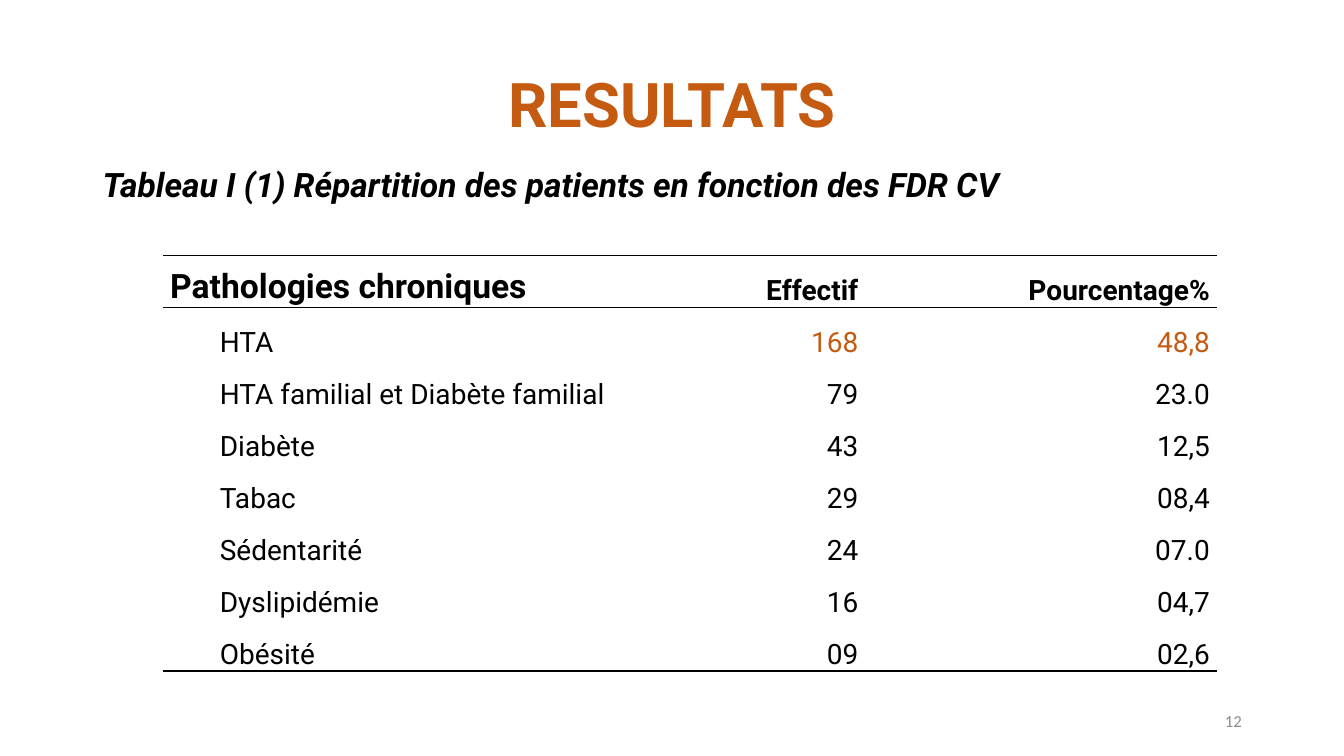
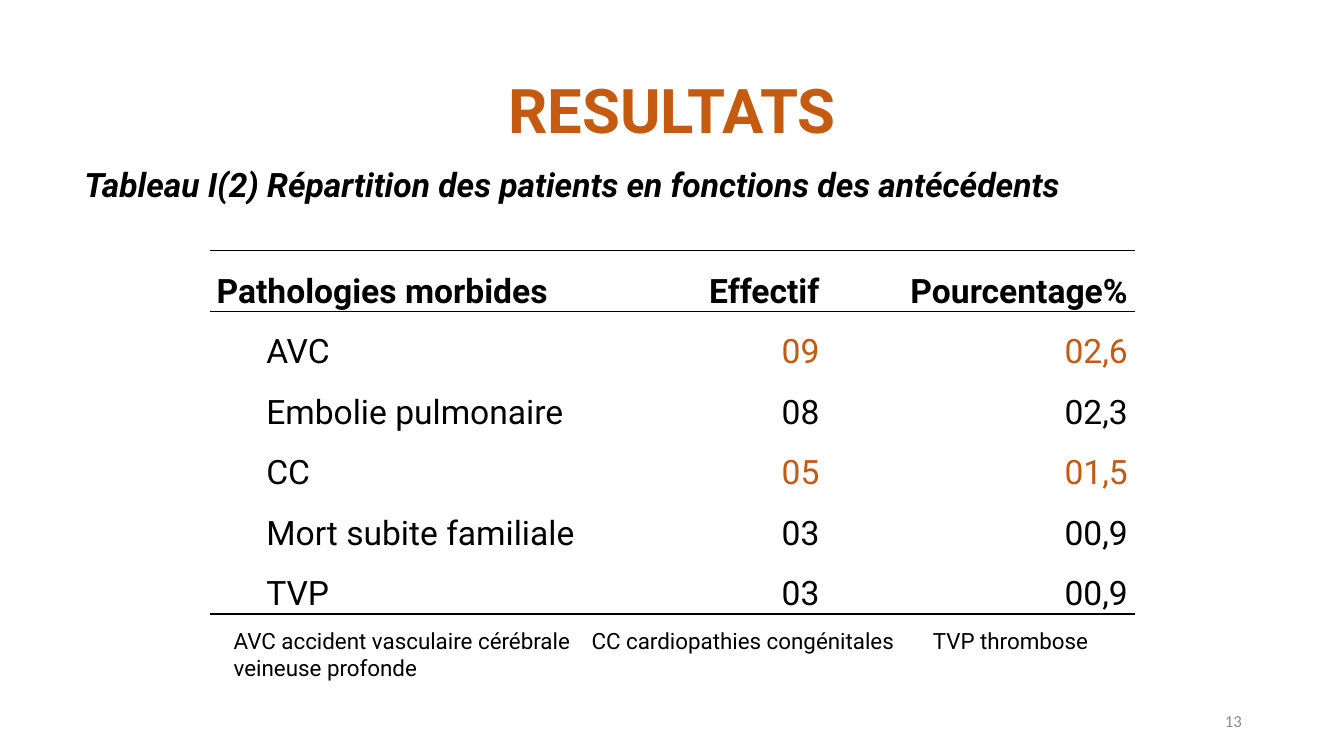
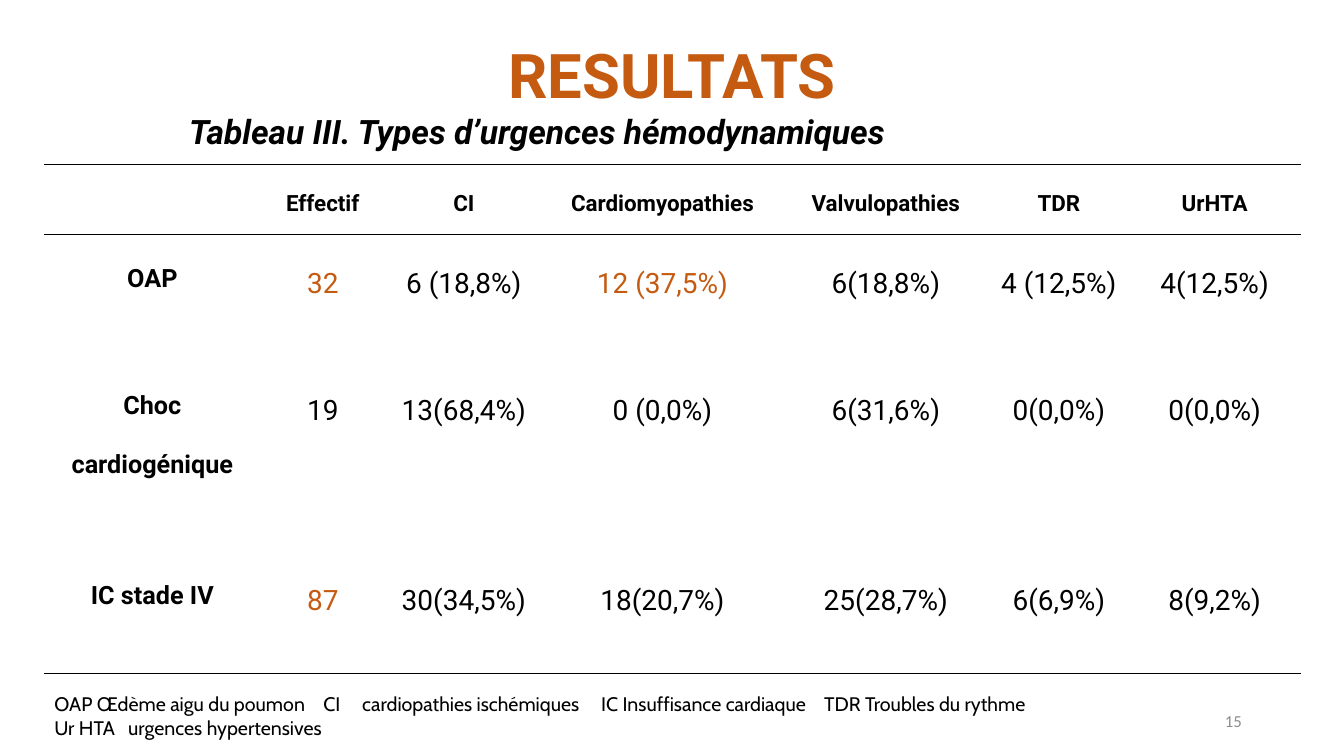
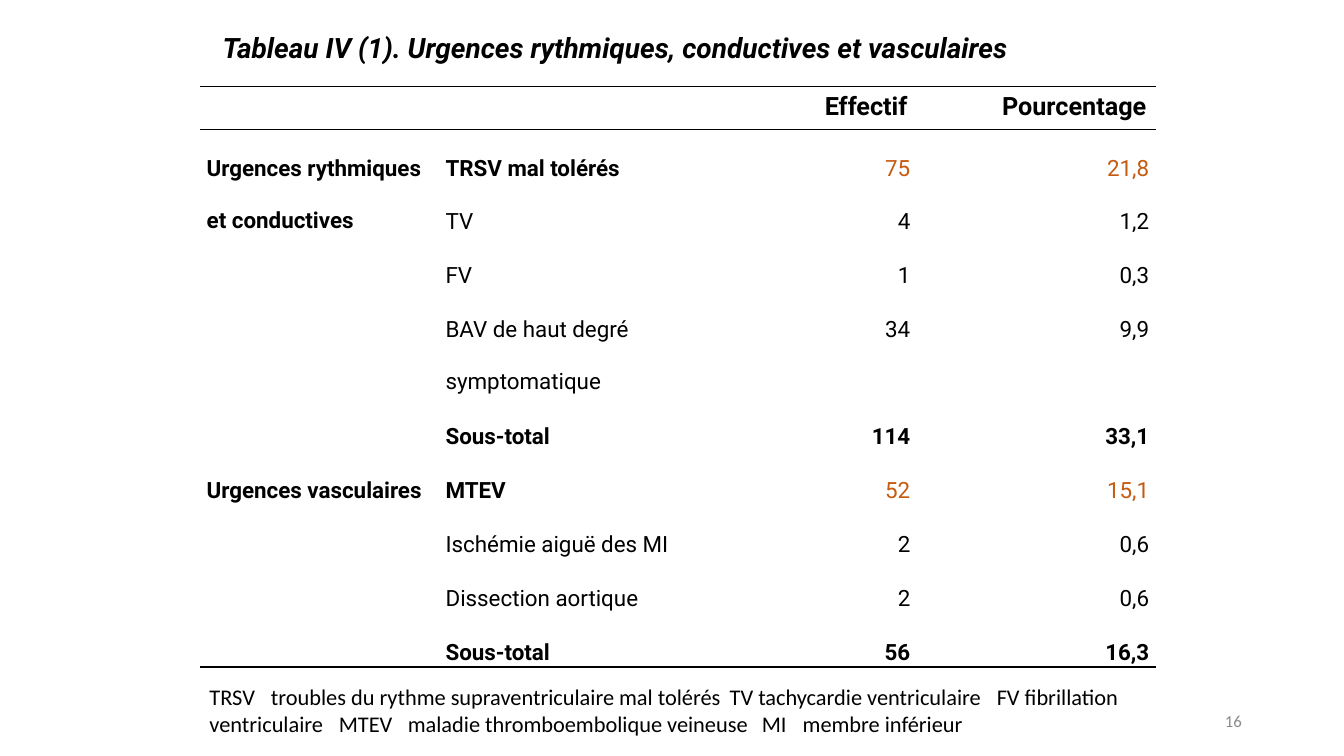
from collections import namedtuple

from lxml import etree
from pptx import Presentation
from pptx.dml.color import RGBColor
from pptx.enum.text import MSO_ANCHOR, PP_ALIGN
from pptx.oxml.ns import qn
from pptx.util import Cm, Pt

LEFT, CENTER, RIGHT = PP_ALIGN.LEFT, PP_ALIGN.CENTER, PP_ALIGN.RIGHT
TOP, MIDDLE, BOTTOM = MSO_ANCHOR.TOP, MSO_ANCHOR.MIDDLE, MSO_ANCHOR.BOTTOM

COLORS = {"text": "000000", "accent": "C55A11", "page": "8C8C8C"}
FONT = "Roboto"
NO_STYLE = "{2D5ABB26-0587-4C30-8999-92F81FD0307C}"
TIGHT = (0.18, 0)  # horizontal and vertical cell margins

Column = namedtuple("Column", "width align head_size size head_spacing indent",
                    defaults=(1.5, 0))


class Deck:
    """Holds the shared style and the slide being built."""

    def __init__(self):
        self.prs = Presentation()
        self.prs.slide_width, self.prs.slide_height = Cm(33.87), Cm(19.05)
        self.slide = None

    def new_slide(self, number):
        self.slide = self.prs.slides.add_slide(self.prs.slide_layouts[6])
        self.text(str(number), (23.93, 17.65, 7.62, 1.02), 12, color="page",
                  font="Calibri", align=RIGHT, anchor=MIDDLE)

    def format(self, paragraph, size, color="text", font=FONT, bold=False,
               italic=False, align=LEFT, spacing=1.0):
        paragraph.alignment = align
        paragraph.line_spacing = spacing
        for run in paragraph.runs:
            run.font.name, run.font.size = font, Pt(size)
            run.font.bold, run.font.italic = bold, italic
            run.font.color.rgb = RGBColor.from_string(COLORS[color])

    def text(self, content, box, size, anchor=TOP, **style):
        frame = self.slide.shapes.add_textbox(*map(Cm, box)).text_frame
        frame.word_wrap = True
        frame.vertical_anchor = anchor
        frame.text = content
        for paragraph in frame.paragraphs:
            self.format(paragraph, size, **style)
        return frame

    def title(self, top):
        self.text("RESULTATS", (2.34, top, 29.21, 3.68), 44, color="accent",
                  bold=True, align=CENTER, anchor=MIDDLE, spacing=0.9)

    def caption(self, content, box, size=24, spacing=1.0):
        self.text(content, box, size, bold=True, italic=True, spacing=spacing)

    def legend(self, content, box, size, font, stops):
        """Abbreviations set apart by tab stops."""
        for paragraph in self.text(content, box, size, font=font).paragraphs:
            props = paragraph._p.get_or_add_pPr()
            tabs = etree.SubElement(props, qn("a:tabLst"))
            for stop in stops:
                etree.SubElement(tabs, qn("a:tab"), pos=str(Cm(stop)), algn="l")

    def rule(self, cell, *sides):
        """Black 1 pt borders; sides are given in schema order."""
        props = cell._tc.get_or_add_tcPr()
        for index, side in enumerate(sides):
            line = etree.Element(qn("a:" + side), w=str(Pt(1)))
            fill = etree.SubElement(line, qn("a:solidFill"))
            etree.SubElement(fill, qn("a:srgbClr"), val=COLORS["text"])
            props.insert(index, line)

    def table(self, corner, columns, heights, rows, accents=(), bold=(),
              merges=(), spacing=1.5, anchor=TOP, head_margins=TIGHT):
        left, top = corner
        width = sum(column.width for column in columns)
        table = self.slide.shapes.add_table(
            len(rows), len(columns), Cm(left), Cm(top), Cm(width),
            Cm(sum(heights))).table
        table.first_row = table.horz_banding = False
        table._tbl.tblPr.find(qn("a:tableStyleId")).text = NO_STYLE
        for index, column in enumerate(columns):
            table.columns[index].width = Cm(column.width)
        for first, last in merges:
            table.cell(first, 0).merge(table.cell(last, 0))
        closing = {(len(rows) - 1, c) for c in range(len(columns))}
        closing |= {(first, 0) for first, last in merges if last == len(rows) - 1}

        for r, row in enumerate(rows):
            table.rows[r].height = Cm(heights[r])
            head = r == 0
            for c, (content, column) in enumerate(zip(row, columns)):
                cell = table.cell(r, c)
                across, down = head_margins if head else TIGHT
                cell.margin_left = cell.margin_right = Cm(across)
                cell.margin_top = cell.margin_bottom = Cm(down)
                cell.vertical_anchor = anchor
                cell.fill.background()
                if content:
                    cell.text_frame.text = content
                    paragraph = cell.text_frame.paragraphs[0]
                    self.format(
                        paragraph, column.head_size if head else column.size,
                        color="accent" if (r, c) in accents else "text",
                        bold=head or (r, c) in bold, align=column.align,
                        spacing=column.head_spacing if head else spacing)
                    if column.indent and not head:
                        paragraph._p.get_or_add_pPr().set(
                            "marL", str(Cm(column.indent)))
                if head:
                    self.rule(cell, "lnT", "lnB")
                elif (r, c) in closing:
                    self.rule(cell, "lnB")


def main():
    deck = Deck()

    # Risk factors
    deck.new_slide(12)
    deck.title(0.86)
    deck.caption("Tableau I (1) Répartition des patients en fonction des FDR CV",
                 (2.34, 4.11, 30.12, 12.09), spacing=0.9)
    risk_factors = [
        ("Pathologies chroniques", "Effectif", "Pourcentage%"),
        ("HTA", "168", "48,8"),
        ("HTA familial et Diabète familial", "79", "23.0"),
        ("Diabète", "43", "12,5"),
        ("Tabac", "29", "08,4"),
        ("Sédentarité", "24", "07.0"),
        ("Dyslipidémie", "16", "04,7"),
        ("Obésité", "09", "02,6"),
    ]
    deck.table((4.11, 6.43),
               [Column(12.67, LEFT, 24, 20, 1.02, 1.25),
                Column(5.03, RIGHT, 20, 20), Column(8.86, RIGHT, 20, 20)],
               [1.31] * len(risk_factors), risk_factors,
               accents={(1, 1), (1, 2)}, anchor=BOTTOM)

    # Medical history
    deck.new_slide(13)
    deck.title(1.02)
    deck.caption("Tableau I(2) Répartition des patients en fonctions des antécédents",
                 (1.88, 4.11, 30.58, 12.09), spacing=0.9)
    history = [
        ("Pathologies morbides", "Effectif", "Pourcentage%"),
        ("AVC", "09", "02,6"),
        ("Embolie pulmonaire", "08", "02,3"),
        ("CC", "05", "01,5"),
        ("Mort subite familiale", "03", "00,9"),
        ("TVP", "03", "00,9"),
    ]
    deck.table((5.28, 6.32),
               [Column(11.13, LEFT, 24, 24, 1.02, 1.25),
                Column(4.42, RIGHT, 24, 24), Column(7.77, RIGHT, 24, 24)],
               [1.49] * len(history), history,
               accents={(1, 1), (1, 2), (3, 1), (3, 2)}, anchor=BOTTOM)
    deck.legend("AVC accident vasculaire cérébrale\tCC cardiopathies congénitales"
                "\tTVP thrombose veineuse profonde",
                (5.64, 15.67, 22.94, 1.63), 16, FONT, [9.02, 17.62])

    # Haemodynamic emergencies
    deck.new_slide(15)
    deck.title(0.13)
    deck.caption("Tableau III. Types d’urgences hémodynamiques",
                 (4.52, 2.67, 25.81, 1.27))
    haemodynamic = [
        ("", "Effectif", "CI", "Cardiomyopathies", "Valvulopathies", "TDR", "UrHTA"),
        ("OAP", "32", "6 (18,8%)", "12 (37,5%)", "6(18,8%)", "4 (12,5%)", "4(12,5%)"),
        ("Choc cardiogénique", "19", "13(68,4%)", "0 (0,0%)", "6(31,6%)",
         "0(0,0%)", "0(0,0%)"),
        ("IC stade IV", "87", "30(34,5%)", "18(20,7%)", "25(28,7%)",
         "6(6,9%)", "8(9,2%)"),
    ]
    value_widths = [3.15, 3.96, 6.05, 5.21, 3.51, 4.34]
    deck.table((1.12, 4.14),
               [Column(5.44, CENTER, 16, 18, 2)]
               + [Column(width, CENTER, 16, 20, 2) for width in value_widths],
               [1.76, 3.2, 4.8, 3.07], haemodynamic,
               accents={(1, 1), (1, 3), (3, 1)},
               bold={(1, 0), (2, 0), (3, 0)}, spacing=2)
    deck.legend("OAP Œdème aigu du poumon\tCI\tcardiopathies ischémiques"
                "\tIC Insuffisance cardiaque\tTDR Troubles du rythme\n"
                "Ur HTA\turgences hypertensives",
                (1.12, 17.32, 29.51, 1.45), 14, "Cabin",
                [1.86, 6.78, 7.76, 13.78, 19.4])

    # Rhythm, conduction and vascular emergencies
    deck.new_slide(16)
    deck.caption("Tableau IV (1). Urgences rythmiques, conductives et vasculaires",
                 (5.36, 0.64, 23.5, 1.12), size=20)
    rhythm_vascular = [
        ("", "", "Effectif", "Pourcentage"),
        ("Urgences rythmiques et conductives", "TRSV mal tolérés", "75", "21,8"),
        ("", "TV", "4", "1,2"),
        ("", "FV", "1", "0,3"),
        ("", "BAV de haut degré symptomatique", "34", "9,9"),
        ("", "Sous-total", "114", "33,1"),
        ("Urgences vasculaires", "MTEV", "52", "15,1"),
        ("", "Ischémie aiguë des MI", "2", "0,6"),
        ("", "Dissection aortique", "2", "0,6"),
        ("", "Sous-total", "56", "16,3"),
    ]
    group_starts, subtotals = (1, 6), (5, 9)
    deck.table((5.03, 2.18),
               [Column(6.02, LEFT, 18, 16, 1), Column(8.51, LEFT, 18, 16, 1),
                Column(3.56, RIGHT, 18, 16, 1), Column(6.02, RIGHT, 18, 16, 1)],
               [1.08] + [1.34] * 3 + [2.67] + [1.34] * 5, rhythm_vascular,
               accents={(r, c) for r in group_starts for c in (2, 3)},
               bold={(r, c) for r in group_starts for c in (0, 1)}
               | {(r, c) for r in subtotals for c in (1, 2, 3)},
               merges=list(zip(group_starts, subtotals)), spacing=2,
               head_margins=(0.25, 0.13))
    deck.legend("TRSV\ttroubles du rythme supraventriculaire mal tolérés"
                "\tTV tachycardie ventriculaire\tFV fibrillation ventriculaire"
                "\tMTEV\tmaladie thromboembolique veineuse\tMI\tmembre inférieur",
                (5.03, 17.09, 25.86, 1.63), 16, "Calibri",
                [1.55, 3.26, 5, 13.11, 13.92, 14.95, 19.84])

    deck.prs.save("out.pptx")


if __name__ == "__main__":
    main()
